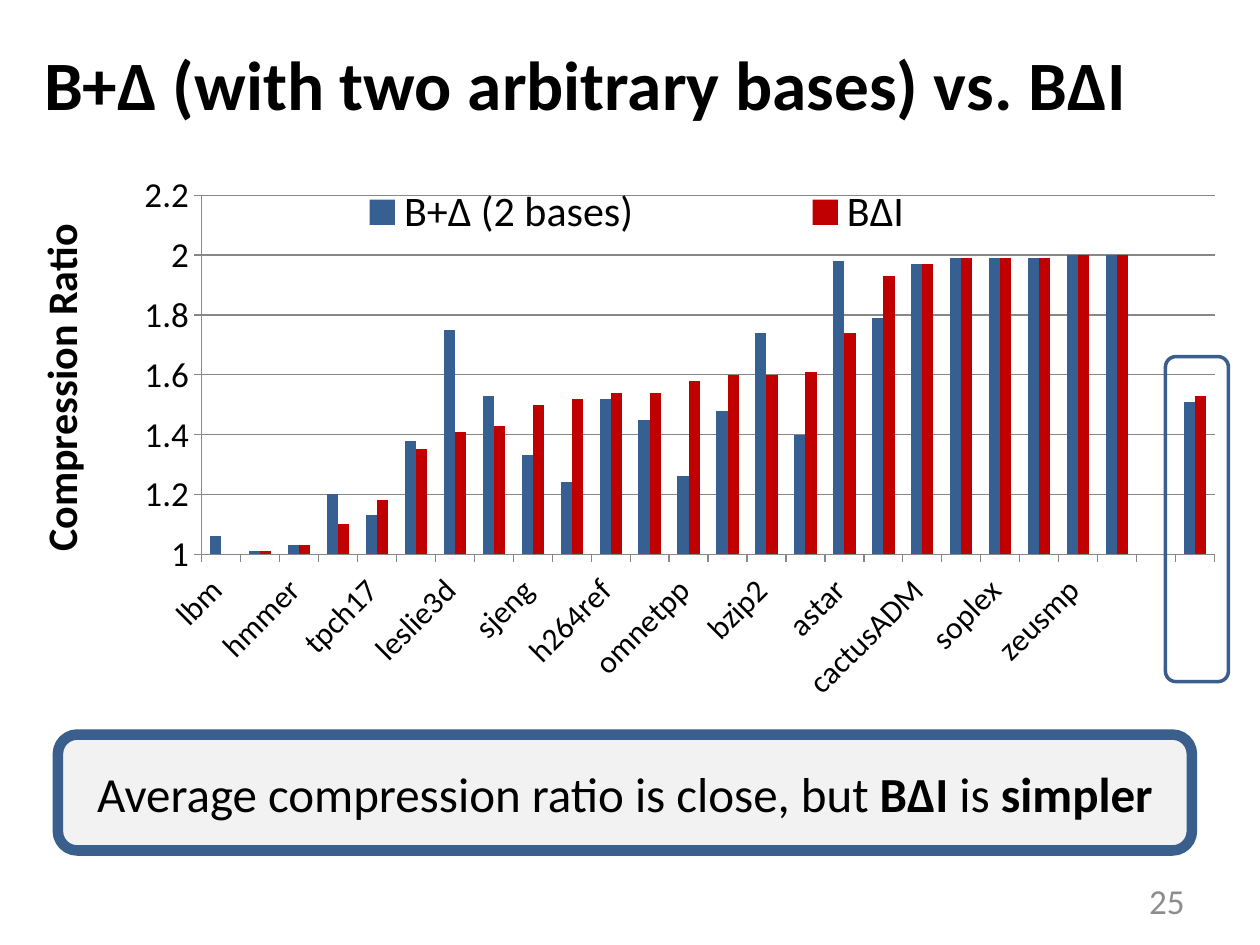
from dataclasses import dataclass
from typing import NamedTuple

from lxml import etree
from pptx import Presentation
from pptx.chart.data import CategoryChartData
from pptx.dml.color import RGBColor
from pptx.enum.chart import XL_CHART_TYPE, XL_LEGEND_POSITION, XL_TICK_MARK
from pptx.enum.shapes import MSO_SHAPE
from pptx.enum.text import MSO_ANCHOR, MSO_AUTO_SIZE, PP_ALIGN
from pptx.util import Inches, Pt

COLUMNS = XL_CHART_TYPE.COLUMN_CLUSTERED
TOP = XL_LEGEND_POSITION.TOP
OUTSIDE, NO_TICK = XL_TICK_MARK.OUTSIDE, XL_TICK_MARK.NONE
ROUNDED = MSO_SHAPE.ROUNDED_RECTANGLE
MIDDLE = MSO_ANCHOR.MIDDLE
NO_FIT = MSO_AUTO_SIZE.NONE
LEFT, CENTER, RIGHT = PP_ALIGN.LEFT, PP_ALIGN.CENTER, PP_ALIGN.RIGHT
CHART_NS = "http://schemas.openxmlformats.org/drawingml/2006/chart"


@dataclass(frozen=True)
class Theme:
    font: str = "Calibri"
    text: RGBColor = RGBColor(0x00, 0x00, 0x00)
    muted: RGBColor = RGBColor(0x8C, 0x8C, 0x8C)
    grid: RGBColor = RGBColor(0x87, 0x87, 0x87)
    panel: RGBColor = RGBColor(0xF2, 0xF2, 0xF2)
    outline: RGBColor = RGBColor(0x3A, 0x5F, 0x8C)
    title_size: float = 39.6
    message_size: float = 28
    label_size: float = 24
    value_size: float = 20
    category_size: float = 18
    chart_size: float = 10


class Box(NamedTuple):
    left: float
    top: float
    width: float
    height: float

    def lengths(self):
        return [Inches(side) for side in self]


class Series(NamedTuple):
    name: str
    color: RGBColor
    values: tuple


THEME = Theme()
CHART_BOX = Box(0.17, 0.67, 9.67, 5.08)
PLOT_BOX = Box(1.6, 1.55, 8.04, 2.85)
LEGEND_BOX = Box(1.62, 1.43, 6.87, 0.51)
AXIS_TITLE_BOX = Box(0.2, 1.72, 0.4, 2.6)
BENCHMARKS = (
    "lbm", "wrf", "hmmer", "sphinx3", "tpch17", "libquantum", "leslie3d",
    "gromacs", "sjeng", "mcf", "h264ref", "tpch2", "omnetpp", "websrv",
    "bzip2", "xalancbmk", "astar", "tpch6", "cactusADM", "gcc", "soplex",
    "gobmk", "zeusmp", "GemsFDTD", "", "GeoMean",
)
SERIES = (
    Series("B+Δ (2 bases)", RGBColor(0x37, 0x60, 0x92), (
        1.06, 1.01, 1.03, 1.2, 1.13, 1.38, 1.75, 1.53, 1.33, 1.24, 1.52, 1.45, 1.26,
        1.48, 1.74, 1.4, 1.98, 1.79, 1.97, 1.99, 1.99, 1.99, 2, 2, None, 1.51)),
    Series("BΔI", RGBColor(0xC0, 0x00, 0x00), (
        1, 1.01, 1.03, 1.1, 1.18, 1.35, 1.41, 1.43, 1.5, 1.52, 1.54, 1.54, 1.58,
        1.6, 1.6, 1.61, 1.74, 1.93, 1.97, 1.99, 1.99, 1.99, 2, 2, None, 1.53)),
)


def style_font(font, size: float, color: RGBColor = THEME.text, bold: bool = False) -> None:
    font.name = THEME.font
    font.size = Pt(size)
    font.bold = bold
    font.color.rgb = color


def place(shape, box: Box) -> None:
    shape.left, shape.top, shape.width, shape.height = box.lengths()


def add_title(page, text: str) -> None:
    title = page.shapes.title
    place(title, Box(0.25, 0.03, 9.67, 1.25))
    frame = title.text_frame
    frame.text = text
    frame.auto_size = NO_FIT
    frame.vertical_anchor = MIDDLE
    para = frame.paragraphs[0]
    para.alignment = LEFT
    style_font(para.font, THEME.title_size, bold=True)


def add_page_number(page, text: str) -> None:
    frame = page.shapes.add_textbox(*Box(7.17, 6.95, 2.33, 0.4).lengths()).text_frame
    frame.word_wrap = True
    frame.vertical_anchor = MIDDLE
    para = frame.paragraphs[0]
    para.text = text
    para.alignment = RIGHT
    style_font(para.font, THEME.value_size, THEME.muted)


def set_layout(parent, index: int, box: Box, inner: bool = False) -> None:
    """Fix a chart part at a box on the page, stored as fractions of the chart."""
    for old in parent.findall(f"{{{CHART_NS}}}layout"):
        parent.remove(old)
    layout = etree.Element(f"{{{CHART_NS}}}layout")
    manual = etree.SubElement(layout, f"{{{CHART_NS}}}manualLayout")
    settings = {"layoutTarget": "inner"} if inner else {}
    settings.update(
        xMode="edge",
        yMode="edge",
        x=(box.left - CHART_BOX.left) / CHART_BOX.width,
        y=(box.top - CHART_BOX.top) / CHART_BOX.height,
        w=box.width / CHART_BOX.width,
        h=box.height / CHART_BOX.height,
    )
    for name, value in settings.items():
        etree.SubElement(manual, f"{{{CHART_NS}}}{name}", val=str(value))
    parent.insert(index, layout)


def style_axis(axis, size: float) -> None:
    axis.major_tick_mark = OUTSIDE
    axis.minor_tick_mark = NO_TICK
    axis.format.line.color.rgb = THEME.grid
    style_font(axis.tick_labels.font, size)


def add_ratio_chart(page) -> None:
    data = CategoryChartData()
    # The closing space keeps the slanted labels clear of the axis.
    data.categories = [f"{name} " if name else "" for name in BENCHMARKS]
    for series in SERIES:
        data.add_series(series.name, series.values)
    chart = page.shapes.add_chart(COLUMNS, *CHART_BOX.lengths(), data).chart
    chart.has_title = False
    style_font(chart.font, THEME.chart_size)

    plot = chart.plots[0]
    plot.gap_width = 150
    plot.vary_by_categories = False
    for columns, series in zip(plot.series, SERIES):
        columns.format.fill.solid()
        columns.format.fill.fore_color.rgb = series.color
        columns.invert_if_negative = False

    style_axis(chart.category_axis, THEME.category_size)
    ratio = chart.value_axis
    style_axis(ratio, THEME.value_size)
    ratio.minimum_scale, ratio.maximum_scale, ratio.major_unit = 1, 2.2, 0.2
    ratio.major_gridlines.format.line.color.rgb = THEME.grid
    ratio.tick_labels.number_format = "General"
    ratio.tick_labels.number_format_is_linked = False
    para = ratio.axis_title.text_frame.paragraphs[0]
    para.text = "Compression Ratio"
    style_font(para.font, THEME.label_size, bold=True)

    chart.has_legend = True
    chart.legend.position = TOP
    chart.legend.include_in_layout = True
    style_font(chart.legend.font, THEME.label_size)

    root = chart.element
    root.xpath(".//c:catAx/c:txPr/a:bodyPr")[0].set("rot", "-2700000")
    title_body = root.xpath(".//c:valAx/c:title//a:bodyPr")[0]
    title_body.set("rot", "-5400000")
    title_body.set("vert", "horz")
    set_layout(root.xpath(".//c:plotArea")[0], 0, PLOT_BOX, inner=True)
    set_layout(root.xpath(".//c:legend")[0], 1, LEGEND_BOX)
    set_layout(root.xpath(".//c:valAx/c:title")[0], 1, AXIS_TITLE_BOX)


def add_rounded_box(page, box: Box, line_width: float):
    shape = page.shapes.add_shape(ROUNDED, *box.lengths())
    shape.shadow.inherit = False
    shape.fill.background()
    shape.line.color.rgb = THEME.outline
    shape.line.width = Pt(line_width)
    return shape


def add_message(page, spans: tuple) -> None:
    panel = add_rounded_box(page, Box(0.46, 5.83, 9, 0.92), 6)
    panel.fill.solid()
    panel.fill.fore_color.rgb = THEME.panel
    frame = panel.text_frame
    frame.word_wrap = True
    frame.vertical_anchor = MIDDLE
    para = frame.paragraphs[0]
    para.alignment = CENTER
    for text, bold in spans:
        span = para.add_run()
        span.text = text
        style_font(span.font, THEME.message_size, bold=bold)


def main() -> None:
    deck = Presentation()
    deck.slide_width, deck.slide_height = Inches(10), Inches(7.5)
    page = deck.slides.add_slide(deck.slide_layouts.get_by_name("Title Only"))
    add_title(page, "B+Δ (with two arbitrary bases) vs. BΔI")
    add_page_number(page, "25")
    add_ratio_chart(page)
    add_message(page, (("Average compression ratio is close, but ", False), ("BΔI", True),
                       (" is ", False), ("simpler", True)))
    add_rounded_box(page, Box(9.25, 2.83, 0.5, 2.58), 2)
    deck.save("out.pptx")


if __name__ == "__main__":
    main()
